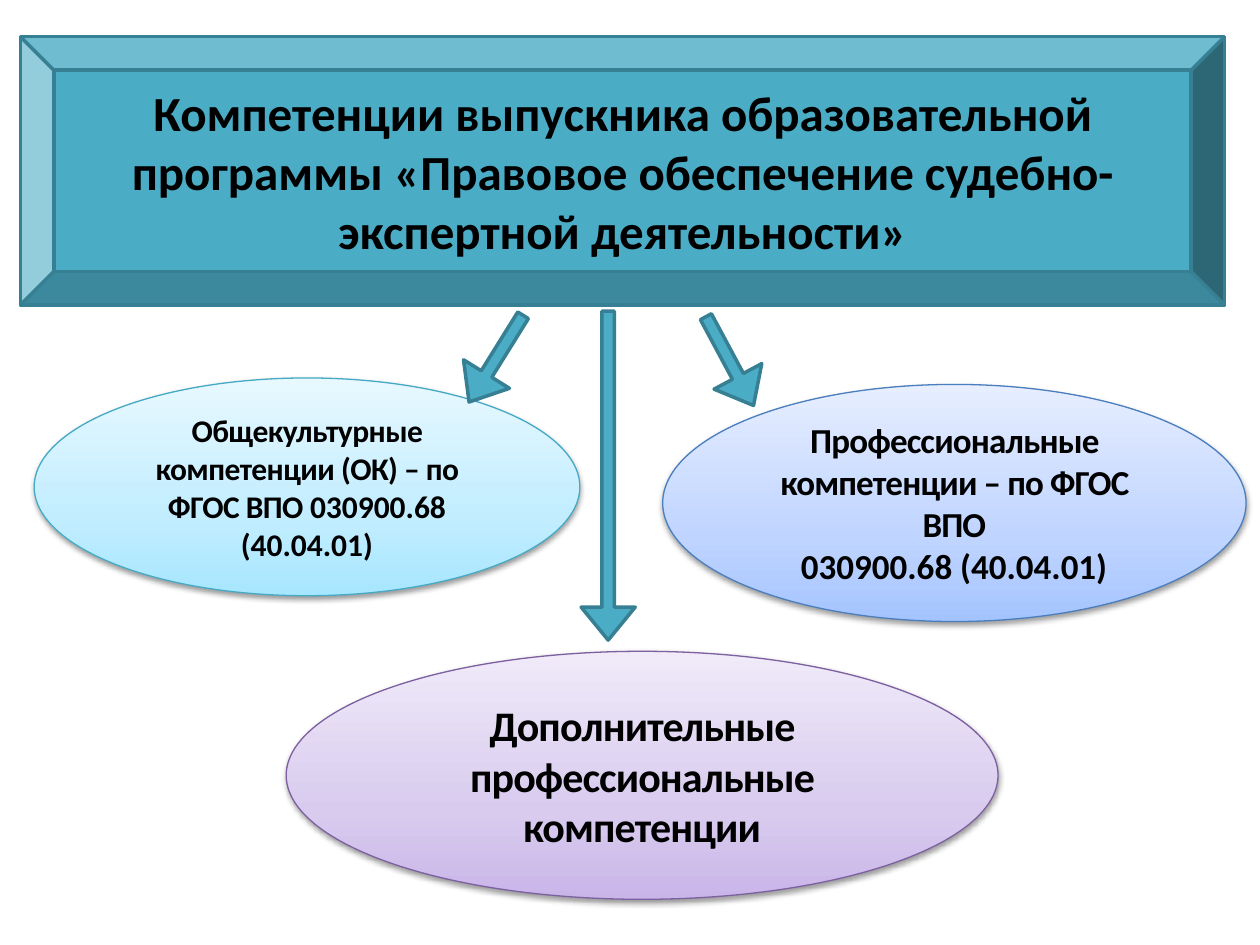
"""Builds the slide on graduate competencies: a bevelled title, three ovals and three arrows."""
import copy

import lxml.etree
import pptx
import pptx.dml.color
import pptx.enum.shapes
import pptx.enum.text
import pptx.oxml.ns
import pptx.util

COLORS = {
    "text": "000000",
    "teal": "4BACC6",
    "teal_edge": "377F92",
    "aqua": ("A7E6FF", "C1EDFF", "E7F8FF"),
    "aqua_edge": "46AAC5",
    "blue": ("A4C4FF", "BFD4FF", "E6EEFF"),
    "blue_edge": "4B7EBC",
    "violet": ("C9B5E8", "D8CBEE", "F0EAF9"),
    "violet_edge": "7D60A0",
}
STOP_POSITIONS = (0, 0.35, 1)
FONT = "Calibri"

TITLE = ("Компетенции выпускника образовательной программы "
         "«Правовое обеспечение судебно-экспертной деятельности»")
TITLE_BOX = (0.41, 0.74, 24.28, 5.41)

COMPETENCIES = [
    {"box": (0.69, 7.62, 11, 4.39), "color": "aqua", "size": 18,
     "runs": [("Общекультурные компетенции (ОК) – по ФГОС ВПО ", -0.3),
              ("030900.68 (40.04.01)", 0)]},
    {"box": (13.36, 7.75, 11.76, 4.78), "color": "blue", "size": 20,
     "runs": [("Профессиональные компетенции – по ФГОС ВПО\n", -0.5),
              ("030900.68 (40.04.01)", 0)]},
    {"box": (5.77, 13.13, 14.35, 5), "color": "violet", "size": 24,
     "runs": [("Дополнительные профессиональные компетенции", -0.5)]},
]

ARROW_THICKNESS = 1.09
ARROWS = [
    {"center": (10, 7.23), "length": 2.06, "angle": 121.9},
    {"center": (14.71, 7.28), "length": 2.03, "angle": 61.8},
    {"center": (12.26, 9.59), "length": 6.63, "angle": 90},
]


def rgb(value):
    return pptx.dml.color.RGBColor.from_string(value)


def add_part(slide, kind, box, edge, edge_width):
    part = slide.shapes.add_shape(kind, *map(pptx.util.Cm, box))
    part.shadow.inherit = False
    part.line.color.rgb = rgb(COLORS[edge])
    part.line.width = pptx.util.Pt(edge_width)
    return part


def fill_teal(part):
    part.fill.solid()
    part.fill.fore_color.rgb = rgb(COLORS["teal"])


def fill_gradient(part, colors):
    part.fill.gradient()
    part.fill.gradient_angle = 90
    stops = part._element.spPr.find(".//" + pptx.oxml.ns.qn("a:gsLst"))
    stops.insert(1, copy.deepcopy(stops[0]))
    for stop, position, color in zip(part.fill.gradient_stops, STOP_POSITIONS, colors):
        stop.position = position
        stop.color.rgb = rgb(color)


def add_shadow(part):
    qn = pptx.oxml.ns.qn
    effects = part._element.spPr.find(qn("a:effectLst"))
    shadow = lxml.etree.SubElement(
        effects, qn("a:outerShdw"), blurRad=str(pptx.util.Pt(3.1)),
        dist=str(pptx.util.Pt(1.6)), dir="5400000", rotWithShape="0")
    color = lxml.etree.SubElement(shadow, qn("a:srgbClr"), val="000000")
    lxml.etree.SubElement(color, qn("a:alpha"), val="38000")


def write(part, runs, size):
    frame = part.text_frame
    frame.word_wrap = True
    frame.vertical_anchor = pptx.enum.text.MSO_ANCHOR.MIDDLE
    paragraph = frame.paragraphs[0]
    paragraph.alignment = pptx.enum.text.PP_ALIGN.CENTER
    font = paragraph.font
    font.name, font.size, font.bold = FONT, pptx.util.Pt(size), True
    font.color.rgb = rgb(COLORS["text"])
    for text, spacing in runs:
        run = paragraph.add_run()
        run.text = text.rstrip("\n")
        if spacing:
            run._r.get_or_add_rPr().set("spc", str(round(spacing * 100)))
        if text.endswith("\n"):
            paragraph.add_line_break()


def main():
    kinds = pptx.enum.shapes.MSO_SHAPE
    presentation = pptx.Presentation()
    presentation.slide_width = pptx.util.Cm(25.4)
    presentation.slide_height = pptx.util.Cm(19.05)
    slide = presentation.slides.add_slide(presentation.slide_layouts[6])

    title = add_part(slide, kinds.BEVEL, TITLE_BOX, "teal_edge", 2)
    fill_teal(title)
    write(title, [(TITLE, 0)], 28)

    for competency in COMPETENCIES:
        color = competency["color"]
        oval = add_part(slide, kinds.OVAL, competency["box"], color + "_edge", 0.75)
        fill_gradient(oval, COLORS[color])
        add_shadow(oval)
        write(oval, competency["runs"], competency["size"])

    for direction in ARROWS:
        (x, y), length = direction["center"], direction["length"]
        box = (x - length / 2, y - ARROW_THICKNESS / 2, length, ARROW_THICKNESS)
        arrow = add_part(slide, kinds.RIGHT_ARROW, box, "teal_edge", 2)
        fill_teal(arrow)
        arrow.rotation = direction["angle"]
        arrow.adjustments[0] = 0.23
        arrow.adjustments[1] = 0.61

    presentation.save("out.pptx")


if __name__ == "__main__":
    main()
